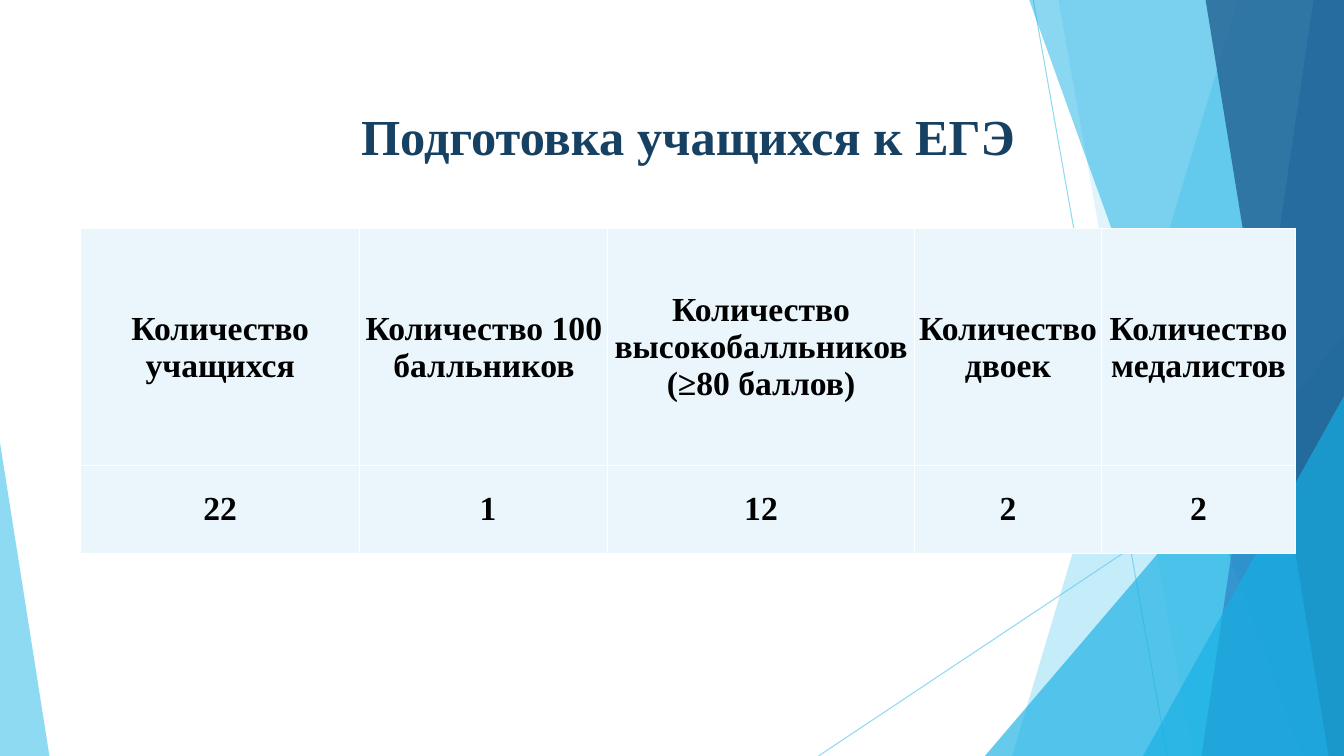
from dataclasses import dataclass

from lxml.etree import SubElement as add_node
from pptx import Presentation
from pptx.dml.color import RGBColor as Color
from pptx.enum.shapes import MSO_CONNECTOR as Connector, MSO_SHAPE as Preset
from pptx.enum.text import MSO_ANCHOR as Anchor, PP_ALIGN as Align
from pptx.oxml import parse_xml
from pptx.oxml.ns import nsdecls, qn
from pptx.util import Inches, Pt


@dataclass(frozen=True)
class Theme:
    font: str = "Times New Roman"
    title_size: int = 36
    table_size: int = 24
    title: str = "174162"
    text: str = "000000"
    cell: str = "EAF6FC"
    border: str = "FFFFFF"
    sky: str = "5FCBEF"
    cyan: str = "17B0E4"
    blue: str = "2E83C3"
    navy: str = "226292"


@dataclass(frozen=True)
class Box:
    left: int
    top: int
    width: int
    height: int

    def point(self, x, y):
        return (int(self.left + self.width * x / 100),
                int(self.top + self.height * y / 100))

    def area(self, x, y, width, height):
        return Box(*self.point(x, y), int(self.width * width / 100),
                   int(self.height * height / 100))

    @property
    def bounds(self):
        return self.left, self.top, self.width, self.height


THEME = Theme()
TITLE = "Подготовка учащихся к ЕГЭ"
RESULTS = [
    ["Количество учащихся", "Количество 100 балльников",
     "Количество высокобалльников\n(≥80 баллов)",
     "Количество двоек", "Количество медалистов"],
    ["22", " 1", "12", "2", "2"],
]
COLUMN_WEIGHTS = [2.77, 2.46, 3.04, 1.86, 1.92]
ROW_WEIGHTS = [2.35, 0.87]


def set_alpha(element, percent):
    for color in element.iter(qn("a:srgbClr")):
        add_node(color, qn("a:alpha"), val=str(percent * 1000))


def paint(shape, color, alpha):
    shape.shadow.inherit = False
    shape.fill.solid()
    shape.fill.fore_color.rgb = Color.from_string(color)
    shape.line.fill.background()
    set_alpha(shape.element.spPr, alpha)


def write(frame, text, *, size, color, bold=True, align=Align.CENTER):
    para = frame.paragraphs[0]
    para.text = text
    para.alignment = align
    for span in para.runs:
        span.font.name = THEME.font
        span.font.size = Pt(size)
        span.font.bold = bold
        span.font.color.rgb = Color.from_string(color)


def add_ray(page, box, start, end):
    ray = page.shapes.add_connector(
        Connector.STRAIGHT, *box.point(*start), *box.point(*end))
    ray.line.width = Pt(0.75)
    ray.line.color.rgb = Color.from_string(THEME.sky)
    set_alpha(ray.element.spPr, 70)
    add_node(ray.element.spPr, qn("a:effectLst"))


def add_shard(page, box, top_x, bottom_x, color, alpha):
    outline = page.shapes.build_freeform(*box.point(top_x, 0), scale=1.0)
    corners = [(100, 0), (100, 100), (bottom_x, 100)]
    outline.add_line_segments([box.point(*corner) for corner in corners])
    paint(outline.convert_to_shape(), color, alpha)


def add_wedge(page, box, apex, color, alpha):
    wedge = page.shapes.add_shape(Preset.ISOSCELES_TRIANGLE, *box.bounds)
    wedge.adjustments[0] = apex
    paint(wedge, color, alpha)


def add_facets(page, box):
    add_ray(page, box, (76.88, 0), (86.85, 100))
    add_ray(page, box, (100, 53.73), (60.9, 100))
    add_shard(page, box, 92.1, 75.3, THEME.sky, 36)
    add_shard(page, box, 78.75, 88.73, THEME.sky, 20)
    add_wedge(page, box.area(73.28, 44.4, 26.72, 55.6), 1, THEME.cyan, 66)
    add_shard(page, box, 76.58, 96.83, THEME.cyan, 50)
    add_shard(page, box, 97.73, 89.4, THEME.blue, 70)
    add_shard(page, box, 89.7, 98.85, THEME.navy, 80)
    add_wedge(page, box.area(85.05, 52.4, 14.95, 47.6), 1, THEME.cyan, 66)
    add_wedge(page, box.area(0, 58.53, 3.68, 41.47), 0, THEME.sky, 70)


def add_title(page, box):
    title = page.shapes.title
    title.left, title.top, title.width, title.height = box.bounds
    title.element.getparent().append(title.element)
    title.text_frame.vertical_anchor = Anchor.MIDDLE
    write(title.text_frame, TITLE, size=THEME.title_size, color=THEME.title)


def add_borders(cell):
    properties = cell._tc.get_or_add_tcPr()
    for place, side in enumerate(("lnL", "lnR", "lnT", "lnB")):
        properties.insert(place, parse_xml(
            f'<a:{side} {nsdecls("a")} w="{Pt(1)}"><a:solidFill>'
            f'<a:srgbClr val="{THEME.border}"/></a:solidFill></a:{side}>'))


def fill_cell(cell, text):
    cell.margin_left = cell.margin_right = 0
    cell.margin_top = cell.margin_bottom = 0
    cell.vertical_anchor = Anchor.MIDDLE
    cell.fill.solid()
    cell.fill.fore_color.rgb = Color.from_string(THEME.cell)
    add_borders(cell)
    write(cell.text_frame, text, size=THEME.table_size, color=THEME.text)


def add_results(page, box):
    table = page.shapes.add_table(
        len(ROW_WEIGHTS), len(COLUMN_WEIGHTS), *box.bounds).table
    table.first_row = table.horz_banding = False
    for column, weight in zip(table.columns, COLUMN_WEIGHTS):
        column.width = int(box.width * weight / sum(COLUMN_WEIGHTS))
    for row, weight, texts in zip(table.rows, ROW_WEIGHTS, RESULTS):
        row.height = int(box.height * weight / sum(ROW_WEIGHTS))
        for cell, text in zip(row.cells, texts):
            fill_cell(cell, text)


def main():
    deck = Presentation()
    deck.slide_width, deck.slide_height = Inches(13.33), Inches(7.5)
    page = deck.slides.add_slide(deck.slide_layouts.get_by_name("Title Only"))
    slide = Box(0, 0, deck.slide_width, deck.slide_height)
    add_facets(page, slide)
    add_title(page, slide.area(5.18, 12.67, 92.03, 10.53))
    add_results(page, slide.area(6, 30.27, 90.38, 42.93))
    deck.save("out.pptx")


if __name__ == "__main__":
    main()
